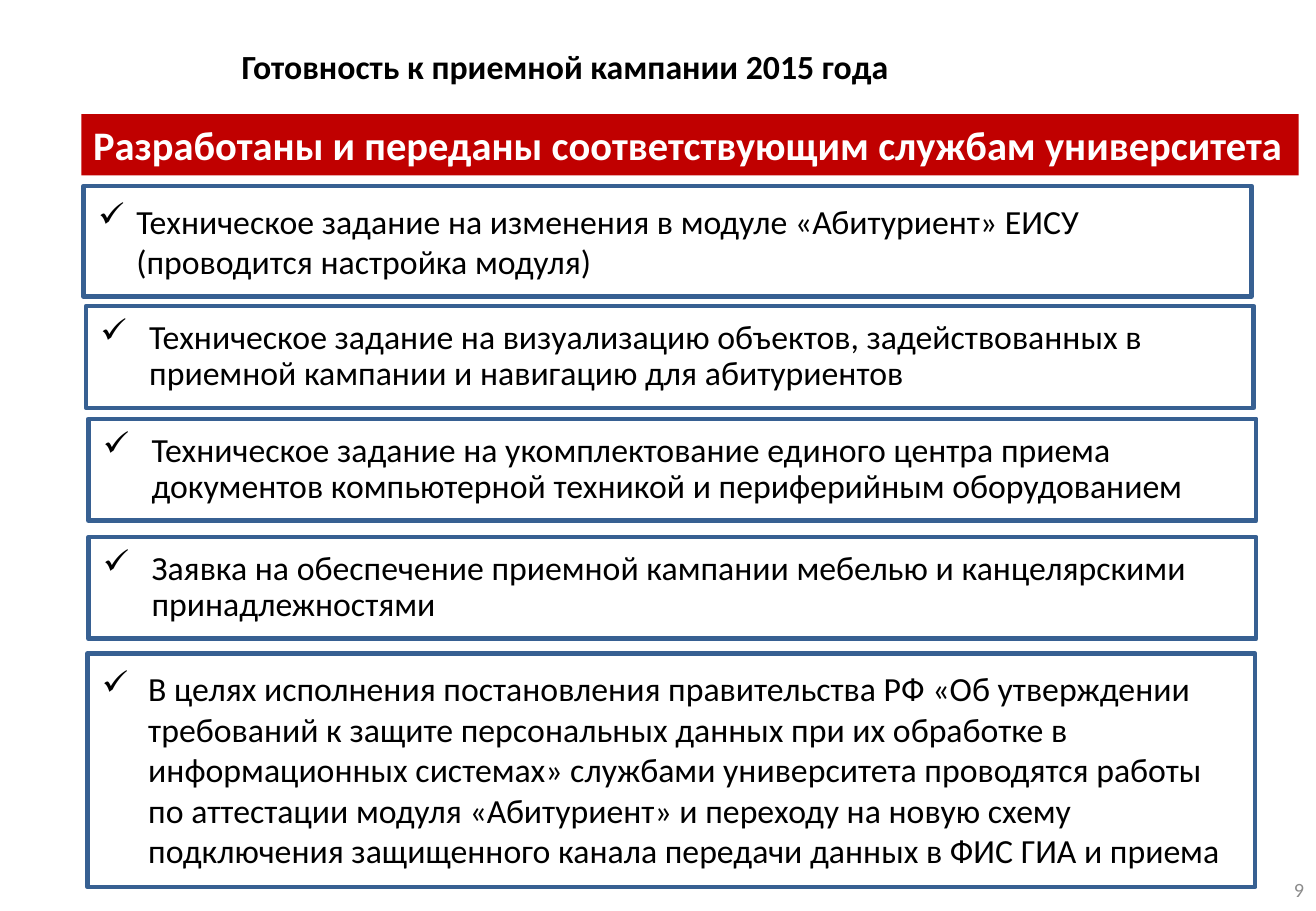
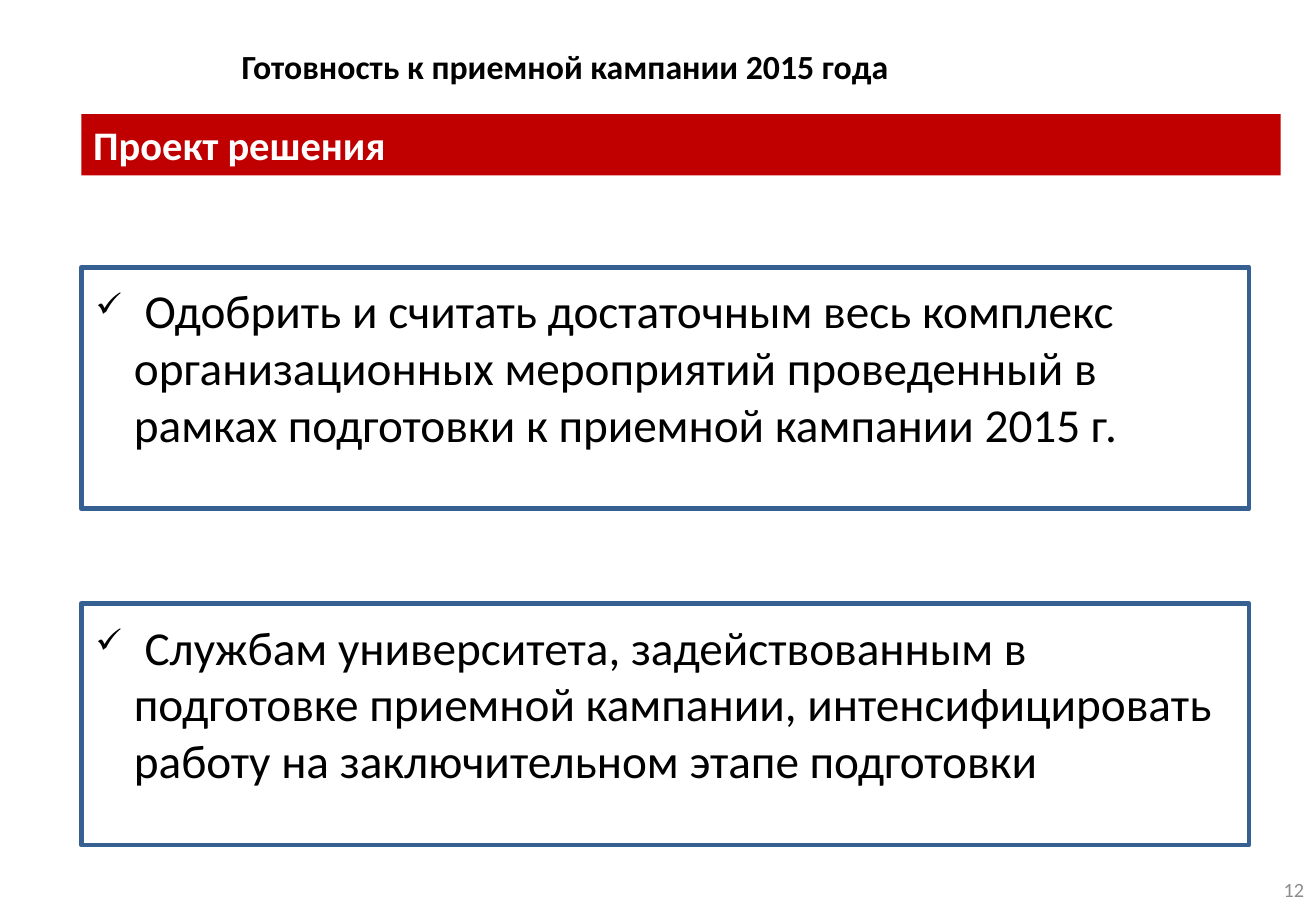
import pptx
import pptx.util
import pptx.dml.color
import pptx.enum.shapes
import pptx.enum.text
import pptx.oxml

Cm = pptx.util.Cm
Pt = pptx.util.Pt
RGBColor = pptx.dml.color.RGBColor
ANCHOR = pptx.enum.text.MSO_ANCHOR
ALIGN = pptx.enum.text.PP_ALIGN

RED = RGBColor(0xC0, 0x00, 0x00)
BLUE = RGBColor(0x37, 0x60, 0x92)
GREY = RGBColor(0x8C, 0x8C, 0x8C)
BLACK = RGBColor(0x00, 0x00, 0x00)
WHITE = RGBColor(0xFF, 0xFF, 0xFF)

TITLE = "Готовность к приемной кампании 2015 года"
NS = "http://schemas.openxmlformats.org/drawingml/2006/main"


class Deck:
    font = "Calibri"
    box_width = 24.41
    inset = 0.3

    def __init__(self):
        self.prs = pptx.Presentation()
        self.prs.slide_width = Cm(27.51)
        self.prs.slide_height = Cm(19.05)
        self.slide = None

    def put_text(self, shape, text, size, color, bold=False,
                 align=ALIGN.LEFT, anchor=ANCHOR.MIDDLE):
        frame = shape.text_frame
        frame.word_wrap = True
        frame.vertical_anchor = anchor
        frame.text = text
        par = frame.paragraphs[0]
        par.alignment = align
        for run in par.runs:
            run.font.name = self.font
            run.font.size = Pt(size)
            run.font.bold = bold
            run.font.color.rgb = color
        return par

    def label(self, left, top, width, height, text, size, color, **style):
        box = self.slide.shapes.add_textbox(
            Cm(left), Cm(top), Cm(width), Cm(height))
        self.put_text(box, text, size, color, **style)

    def rect(self, left, top, width, height):
        shape = self.slide.shapes.add_shape(
            pptx.enum.shapes.MSO_SHAPE.RECTANGLE,
            Cm(left), Cm(top), Cm(width), Cm(height))
        shape.shadow.inherit = False
        return shape

    def band(self, text, width):
        shape = self.rect(1.7, 2.39, width, 1.28)
        shape.fill.solid()
        shape.fill.fore_color.rgb = RED
        shape.line.fill.background()
        self.put_text(shape, text, 24, WHITE, bold=True, anchor=ANCHOR.TOP)

    def page(self, head, width, number):
        self.slide = self.prs.slides.add_slide(self.prs.slide_layouts[6])
        self.label(4.8, 0.53, 22.43, 1.4, TITLE, 20, BLACK,
                   bold=True, anchor=ANCHOR.BOTTOM)
        self.band(head, width)
        self.label(21.08, 18.08, 6.43, 1.02, number, 12, GREY,
                   align=ALIGN.RIGHT)

    def check(self, par, indent, scale):
        props = par._p.get_or_add_pPr()
        props.set("marL", str(Cm(indent)))
        props.set("indent", str(-Cm(indent)))
        for tag in (f'buSzPct xmlns:a="{NS}" val="{scale * 1000}"',
                    f'buChar xmlns:a="{NS}" char="✓"'):
            props.append(pptx.oxml.parse_xml(f"<a:{tag}/>"))

    def item(self, left, top, height, text, indent=0.8, size=20,
             scale=100, spacing=None):
        shape = self.rect(left, top, self.box_width, height)
        shape.fill.background()
        shape.line.color.rgb = BLUE
        shape.line.width = Pt(2.75)
        frame = shape.text_frame
        frame.margin_left = frame.margin_right = Cm(self.inset)
        frame.margin_top = frame.margin_bottom = Cm(self.inset)
        par = self.put_text(shape, text, size, BLACK, anchor=ANCHOR.TOP)
        if spacing:
            par.line_spacing = spacing
        self.check(par, indent, scale)


def main():
    deck = Deck()

    # Documents handed over
    deck.page("Разработаны и переданы соответствующим службам университета",
              25.45, "9")
    deck.item(1.75, 3.89, 2.31,
              "Техническое задание на изменения в модуле «Абитуриент» ЕИСУ "
              "(проводится настройка модуля)")
    tasks = [
        (1.8, 6.4,
         "Техническое задание на визуализацию объектов, задействованных "
         "в приемной кампании и навигацию для абитуриентов"),
        (1.85, 8.76,
         "Техническое задание на укомплектование единого центра приема "
         "документов компьютерной техникой и периферийным оборудованием"),
        (1.85, 11.23,
         "Заявка на обеспечение приемной кампании мебелью и канцелярскими "
         "принадлежностями"),
    ]
    for left, top, text in tasks:
        deck.item(left, top, 2.13, text, indent=1.02, spacing=0.9)
    deck.item(1.83, 13.67, 4.88,
              "В целях исполнения постановления правительства РФ "
              "«Об утверждении требований к защите персональных данных при "
              "их обработке в информационных системах» службами университета "
              "проводятся работы по аттестации модуля «Абитуриент» и переходу "
              "на новую схему подключения защищенного канала передачи данных "
              "в ФИС ГИА и приема", indent=0.97)

    # Draft decision
    deck.page("Проект решения", 25.07, "12")
    points = [
        " Одобрить и считать достаточным весь комплекс организационных "
        "мероприятий проведенный в рамках подготовки к приемной кампании "
        "2015 г.",
        " Службам университета, задействованным в подготовке приемной "
        "кампании, интенсифицировать работу на заключительном этапе "
        "подготовки",
    ]
    for row, text in enumerate(points):
        deck.item(1.7, 5.59 + 7.03 * row, 5.05, text, size=28, scale=71)

    deck.prs.save("out.pptx")


if __name__ == "__main__":
    main()
